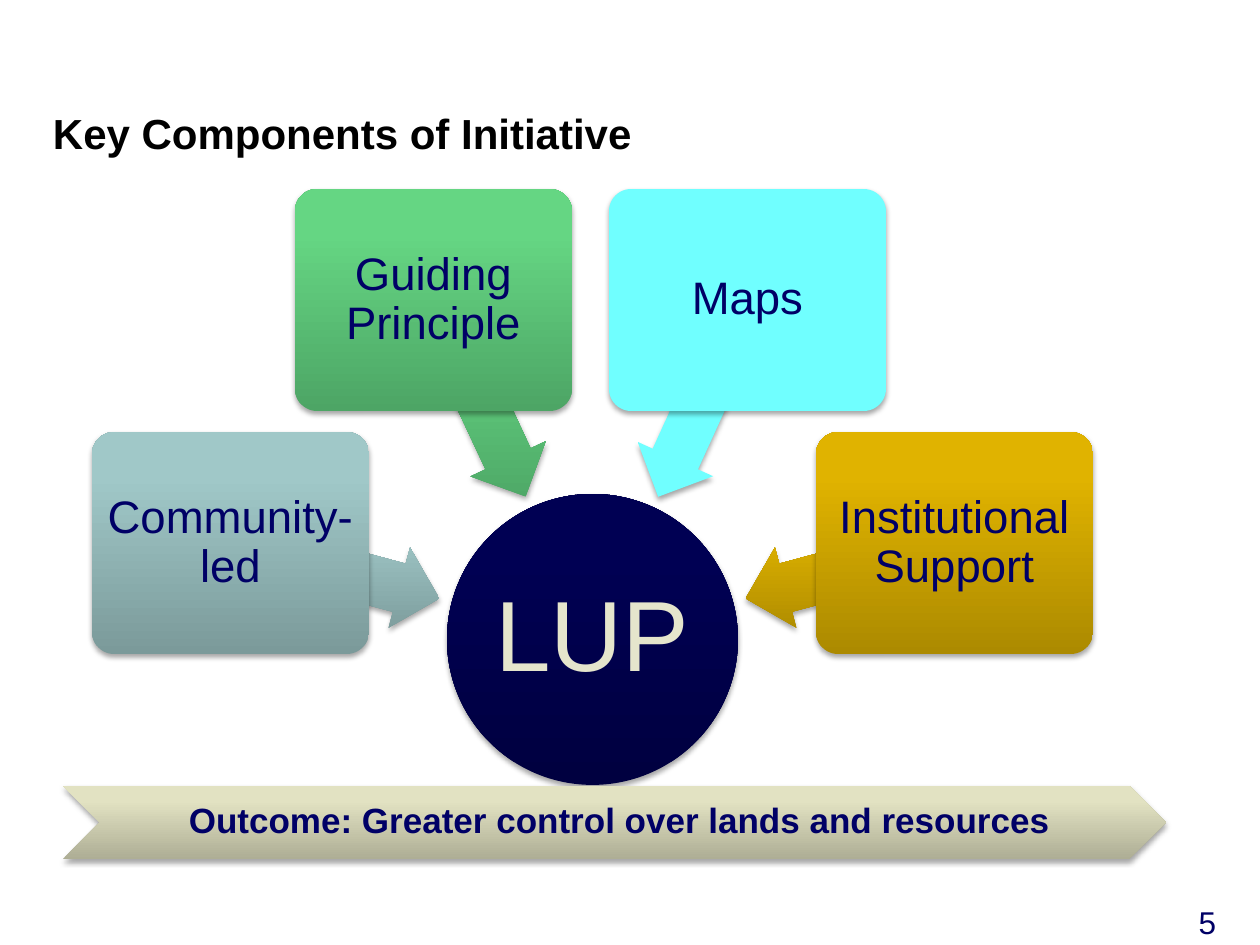
from dataclasses import dataclass

from lxml.etree import SubElement
from pptx import Presentation
from pptx.dml.color import RGBColor
from pptx.enum.shapes import MSO_SHAPE
from pptx.enum.text import MSO_ANCHOR, PP_ALIGN
from pptx.oxml.ns import qn
from pptx.util import Pt

PX = 914400 / 126  # EMU in one px
BOX_W, BOX_H = 277, 222
ARROW_W, ARROW_H = 216, 83

COLORS = {
    "title": "000000",
    "text": "000066",
    "hub_text": "E5E5CC",
    "shadow": "000000",
}
# Bottom and top colour of each gradient
GRADIENTS = {
    "navy": ("000040", "000053"),
    "teal": ("7B9A9A", "A0C8C8"),
    "green": ("4DA565", "65D683"),
    "cyan": ("70FFFF", "70FFFF"),
    "gold": ("AC8A00", "E0B300"),
    "sand": ("AEAE95", "E2E2C2"),
}


@dataclass
class Component:
    label: str
    gradient: str
    box: tuple[int, int]
    arrow: tuple[int, int]
    rotation: float


COMPONENTS = [
    Component("Community-led", "teal", (92, 432), (227, 529), 195),
    Component("Guiding Principle", "green", (295, 189), (372, 357), 245),
    Component("Maps", "cyan", (609, 189), (595, 357), 294.5),
    Component("Institutional Support", "gold", (816, 432), (742, 529), 345),
]


def px(n: int) -> int:
    return round(n * PX)


def add_shadow(sp) -> None:
    sp.shadow.inherit = False
    effects = sp._element.spPr.find(qn("a:effectLst"))
    shadow = SubElement(effects, qn("a:outerShdw"), blurRad=str(Pt(3.1)),
                        dist=str(Pt(1.8)), dir="5400000", rotWithShape="0")
    color = SubElement(shadow, qn("a:srgbClr"), val=COLORS["shadow"])
    SubElement(color, qn("a:alpha"), val="35000")


def add_glossy(slide, kind, left: int, top: int, width: int, height: int,
               gradient: str):
    """Add an unlined shape with a vertical gradient and a soft shadow."""
    sp = slide.shapes.add_shape(kind, px(left), px(top), px(width), px(height))
    sp.line.fill.background()
    sp.fill.gradient()
    sp.fill.gradient_angle = 90
    for stop, position, color in zip(sp.fill.gradient_stops, (0, 0.8),
                                     GRADIENTS[gradient]):
        stop.position = position
        stop.color.rgb = RGBColor.from_string(color)
    sp._element.spPr.find(qn("a:gradFill")).set("rotWithShape", "0")
    add_shadow(sp)
    return sp


def set_text(sp, text: str, size: int, color: str, bold: bool = False,
             align=PP_ALIGN.CENTER, spacing=0.9, margins=None,
             anchor=MSO_ANCHOR.MIDDLE) -> None:
    """Write one paragraph; margins are left, top, right, bottom in px."""
    tf = sp.text_frame
    tf.word_wrap = True
    tf.vertical_anchor = anchor
    if margins is not None:
        (tf.margin_left, tf.margin_top,
         tf.margin_right, tf.margin_bottom) = map(px, margins)
    tf.text = text
    p = tf.paragraphs[0]
    p.alignment = align
    p.line_spacing = spacing
    font = p.runs[0].font
    font.name = "Arial"
    font.size = Pt(size)
    font.bold = bold
    font.color.rgb = RGBColor.from_string(COLORS[color])


def add_label(slide, left: int, top: int, width: int, height: int):
    return slide.shapes.add_textbox(px(left), px(top), px(width), px(height))


def add_component(slide, c: Component) -> None:
    arrow = add_glossy(slide, MSO_SHAPE.LEFT_ARROW, *c.arrow,
                       ARROW_W, ARROW_H, c.gradient)
    arrow.adjustments[0] = 0.6
    arrow.adjustments[1] = 0.5
    arrow.rotation = c.rotation
    box = add_glossy(slide, MSO_SHAPE.ROUNDED_RECTANGLE, *c.box,
                     BOX_W, BOX_H, c.gradient)
    box.adjustments[0] = 0.1
    set_text(box, c.label, 26, "text", margins=(6, 6, 6, 6))


def main() -> None:
    prs = Presentation()
    prs.slide_width, prs.slide_height = px(1260), px(945)
    slide = prs.slides.add_slide(prs.slide_layouts[6])

    # Title and page number
    set_text(add_label(slide, 53, 116, 1081, 42),
             "Key Components of Initiative", 24, "title", bold=True,
             align=PP_ALIGN.LEFT, spacing=Pt(24), margins=(0, 0, 0, 0),
             anchor=MSO_ANCHOR.TOP)
    set_text(add_label(slide, 1155, 897, 105, 42), "5", 18, "text",
             spacing=1.0, anchor=MSO_ANCHOR.TOP)

    # Hub and the components that point to it
    hub = add_glossy(slide, MSO_SHAPE.OVAL, 447, 494, 291, 291, "navy")
    set_text(hub, "LUP", 57, "hub_text", margins=(5, 5, 5, 5))
    for component in COMPONENTS:
        add_component(slide, component)

    # Outcome banner
    banner = add_glossy(slide, MSO_SHAPE.CHEVRON, 63, 786, 1103, 73, "sand")
    set_text(banner, "Outcome: Greater control over lands and resources", 20,
             "text", bold=True, margins=(15, 5, 5, 5))

    prs.save("out.pptx")


if __name__ == "__main__":
    main()
